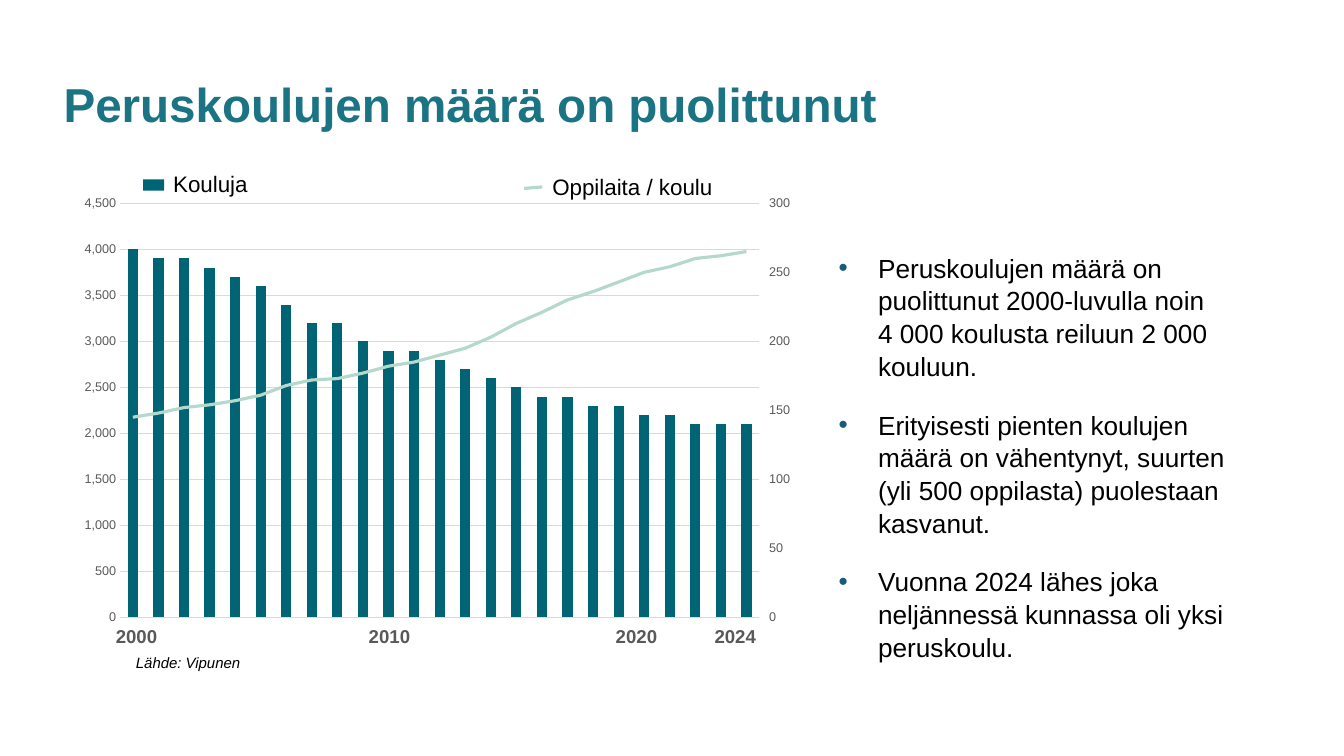
from copy import deepcopy
from typing import NamedTuple

from lxml import etree
from pptx import Presentation
from pptx import util as u
from pptx.chart import axis as chart_axis
from pptx.chart.data import CategoryChartData
from pptx.dml.color import RGBColor
from pptx.enum import chart as charts, shapes, text
from pptx.oxml import parse_xml
from pptx.oxml.ns import nsdecls, qn

class Theme(NamedTuple):
    font: str = "Arial"
    heading: str = "1A7483"
    schools: str = "006475"
    pupils: str = "B5D8CC"
    bullet: str = "165C7D"
    ink: str = "000000"
    muted: str = "595959"
    grid: str = "D9D9D9"
    title_size: float = 34
    body_size: float = 18.7
    legend_size: float = 16
    year_size: float = 13.3
    source_size: float = 10.7
    chart_size: float = 10
    axis_size: float = 9
    line_width: float = 2.25

THEME = Theme()

class Box(NamedTuple):
    left: float
    top: float
    width: float
    height: float

class Label(NamedTuple):
    words: str
    box: Box
    size: float
    color: str = THEME.ink
    bold: bool = False
    italic: bool = False
    wrap: bool = False

class AxisStyle(NamedTuple):
    maximum: float
    step: float
    number_format: str
    tick: charts.XL_TICK_MARK
    grid: bool

SCHOOLS = [4000, 3900, 3900, 3800, 3700, 3600, 3400, 3200, 3200, 3000, 2900, 2900, 2800,
           2700, 2600, 2500, 2400, 2400, 2300, 2300, 2200, 2200, 2100, 2100, 2100]
PUPILS = [145, 148, 152, 154, 157, 161, 168, 172, 173, 177, 182, 185, 190,
          195, 203, 213, 221, 230, 236, 243, 250, 254, 260, 262, 265]
LEFT_AXIS = AxisStyle(4500, 500, "#,##0", charts.XL_TICK_MARK.NONE, True)
RIGHT_AXIS = AxisStyle(300, 50, "General", charts.XL_TICK_MARK.OUTSIDE, False)
SCHOOLS_LABEL = Label("Kouluja", Box(116.6, 118.1, 68.4, 26.6), THEME.legend_size)
PUPILS_LABEL = Label("Oppilaita / koulu", Box(387.4, 120.2, 130.3, 26.6), THEME.legend_size)
SOURCE = Label("Lähde: Vipunen", Box(90, 463, 126, 20.2), THEME.source_size,
               italic=True, wrap=True)
YEARS = [Label(year, Box(left, 442.8, 44.6, 23.8), THEME.year_size, THEME.muted, bold=True)
         for year, left in (("2000", 75.6), ("2010", 256.3), ("2020", 432.7), ("2024", 503.3))]
POINTS = [["Peruskoulujen määrä on puolittunut 2000-luvulla noin",
           "4 000 koulusta reiluun 2 000 kouluun."],
          ["Erityisesti pienten koulujen määrä on vähentynyt, suurten (yli 500 oppilasta) "
           "puolestaan kasvanut."],
          ["Vuonna 2024 lähes joka neljännessä kunnassa oli yksi peruskoulu."]]

def points(box: Box) -> list[u.Length]:
    return [u.Pt(number) for number in box]

def style_font(font, size: float, color: str, bold: bool = False, italic: bool = False) -> None:
    font.name, font.size, font.bold, font.italic = THEME.font, u.Pt(size), bold, italic
    font.color.rgb = RGBColor.from_string(color)

def style_fill(fill, color: str) -> None:
    fill.solid()
    fill.fore_color.rgb = RGBColor.from_string(color)

def style_line(line, color: str, width: float) -> None:
    line.color.rgb = RGBColor.from_string(color)
    line.width = u.Pt(width)

def add_run(paragraph, words: str, *style) -> None:
    run = paragraph.add_run()
    run.text = words
    style_font(run.font, *style)

def add_label(container, label: Label):
    shape = container.add_textbox(*points(label.box))
    frame = shape.text_frame
    frame.word_wrap = label.wrap
    frame.auto_size = text.MSO_AUTO_SIZE.SHAPE_TO_FIT_TEXT
    add_run(frame.paragraphs[0], label.words, label.size, label.color, label.bold, label.italic)
    return shape

def set_placeholder(shape, box: Box, side: float, edge: float, anchor: text.MSO_ANCHOR):
    """Position a placeholder and return its text frame."""
    shape.left, shape.top, shape.width, shape.height = points(box)
    frame = shape.text_frame
    frame.margin_left = frame.margin_right = u.Pt(side)
    frame.margin_top = frame.margin_bottom = u.Pt(edge)
    frame.vertical_anchor, frame.auto_size = anchor, text.MSO_AUTO_SIZE.NONE
    return frame

def add_bullet(paragraph) -> None:
    properties = paragraph._p.get_or_add_pPr()
    indent = u.Pt(28.1)
    properties.set("marL", str(indent))
    properties.set("indent", str(-indent))
    color = etree.SubElement(properties, qn("a:buClr"))
    etree.SubElement(color, qn("a:srgbClr"), val=THEME.bullet)
    etree.SubElement(properties, qn("a:buFont"), typeface=THEME.font)
    etree.SubElement(properties, qn("a:buChar"), char="•")

def fill_placeholders(title, body) -> None:
    frame = set_placeholder(title, Box(45.4, 24.5, 863.3, 102.2), 0, 3.6, text.MSO_ANCHOR.MIDDLE)
    heading = frame.paragraphs[0]
    heading.alignment, heading.line_spacing = text.PP_ALIGN.LEFT, 0.95
    add_run(heading, "Peruskoulujen määrä on puolittunut", THEME.title_size, THEME.heading, True)
    frame = set_placeholder(body, Box(589.7, 174.2, 321.1, 337.7), 9.4, 5, text.MSO_ANCHOR.TOP)
    for index, lines in enumerate(POINTS):
        paragraph = frame.add_paragraph() if index else frame.paragraphs[0]
        add_bullet(paragraph)
        paragraph.space_before = u.Pt(THEME.body_size if index else 0)
        paragraph.line_spacing = 1.04
        for number, line in enumerate(lines):
            if number:
                paragraph.add_line_break()
            add_run(paragraph, line, THEME.body_size, THEME.ink)

def style_axis(axis, style: AxisStyle) -> None:
    axis.minimum_scale, axis.maximum_scale, axis.major_unit = 0, style.maximum, style.step
    axis.has_major_gridlines = style.grid
    if style.grid:
        style_line(axis.major_gridlines.format.line, THEME.grid, 0.75)
    axis.major_tick_mark = style.tick
    axis.format.line.fill.background()
    axis.tick_labels.number_format = style.number_format
    axis.tick_labels.number_format_is_linked = False
    style_font(axis.tick_labels.font, THEME.axis_size, THEME.muted)

def move_pupils_to_right_axis(chart, pupils) -> None:
    category, value = chart.category_axis._element, chart.value_axis._element
    for inversion in pupils.findall(qn("c:invertIfNegative")):
        pupils.remove(inversion)
    line = parse_xml(f'<c:lineChart {nsdecls("c")}><c:grouping val="standard"/>'
                     '<c:varyColors val="0"/><c:marker val="1"/>'
                     '<c:axId val="5001"/><c:axId val="5002"/></c:lineChart>')
    chart.plots[0]._element.addnext(line)
    line.insert(2, pupils)
    marker = parse_xml(f'<c:marker {nsdecls("c")}><c:symbol val="none"/></c:marker>')
    pupils.find(qn("c:cat")).addprevious(marker)
    etree.SubElement(pupils, qn("c:smooth"), val="0")
    right, hidden = deepcopy(value), deepcopy(category)
    for axis, own, other in ((hidden, "5001", "5002"), (right, "5002", "5001")):
        axis.find(qn("c:axId")).set("val", own)
        axis.find(qn("c:crossAx")).set("val", other)
    right.find(qn("c:axPos")).set("val", "r")
    right.find(qn("c:crosses")).set("val", "max")
    value.addnext(right)
    right.addnext(hidden)
    style_axis(chart_axis.ValueAxis(right), RIGHT_AXIS)

def set_plot_area(area, box: Box) -> None:
    for layout in area.findall(qn("c:layout")):
        area.remove(layout)
    sizes = "".join(f'<c:{key} val="{size}"/>' for key, size in zip("xywh", box))
    area.insert(0, parse_xml(
        f'<c:layout {nsdecls("c")}><c:manualLayout><c:layoutTarget val="inner"/>'
        f'<c:xMode val="edge"/><c:yMode val="edge"/>{sizes}</c:manualLayout></c:layout>'))

def add_school_chart(slide) -> None:
    data = CategoryChartData()
    data.categories = [str(n) for n in range(1, len(SCHOOLS) + 1)]
    data.add_series(SCHOOLS_LABEL.words, SCHOOLS)
    data.add_series(PUPILS_LABEL.words, PUPILS)
    chart = slide.shapes.add_chart(charts.XL_CHART_TYPE.COLUMN_CLUSTERED,
                                   *points(Box(49, 132.5, 524.9, 318.2)), data).chart
    chart.has_title = chart.has_legend = False
    style_font(chart.font, THEME.chart_size, THEME.ink)
    plot = chart.plots[0]
    plot.gap_width, plot.vary_by_categories = 150, False
    schools, pupils = plot.series
    style_fill(schools.format.fill, THEME.schools)
    style_line(pupils.format.line, THEME.pupils, THEME.line_width)
    chart.category_axis.visible = False
    style_axis(chart.value_axis, LEFT_AXIS)
    move_pupils_to_right_axis(chart, pupils._element)
    set_plot_area(plot._element.getparent(), Box(0.07, 0.04, 0.87, 0.93))

def add_legend(slide) -> None:
    group = slide.shapes.add_group_shape()
    key = group.shapes.add_shape(shapes.MSO_SHAPE.RECTANGLE, *points(Box(102.2, 128.2, 15.1, 7.9)))
    key.shadow.inherit = False
    style_fill(key.fill, THEME.schools)
    key.line.fill.background()
    add_label(group.shapes, SCHOOLS_LABEL)
    label = add_label(slide.shapes, PUPILS_LABEL)
    sample = slide.shapes.add_connector(shapes.MSO_CONNECTOR.STRAIGHT, u.Pt(374.4), u.Pt(134.6),
                                        u.Pt(387.4), u.Pt(133.5))
    sample.end_connect(label, 1)
    style_line(sample.line, THEME.pupils, THEME.line_width)
    etree.SubElement(sample._element.spPr, qn("a:effectLst"))

def main() -> None:
    presentation = Presentation()
    presentation.slide_width, presentation.slide_height = u.Pt(960), u.Pt(540)
    slide = presentation.slides.add_slide(presentation.slide_layouts[1])
    fill_placeholders(slide.shapes.title, slide.placeholders[1])
    add_school_chart(slide)
    add_legend(slide)
    for label in (*YEARS, SOURCE):
        add_label(slide.shapes, label)
    presentation.save("out.pptx")

if __name__ == "__main__":
    main()
